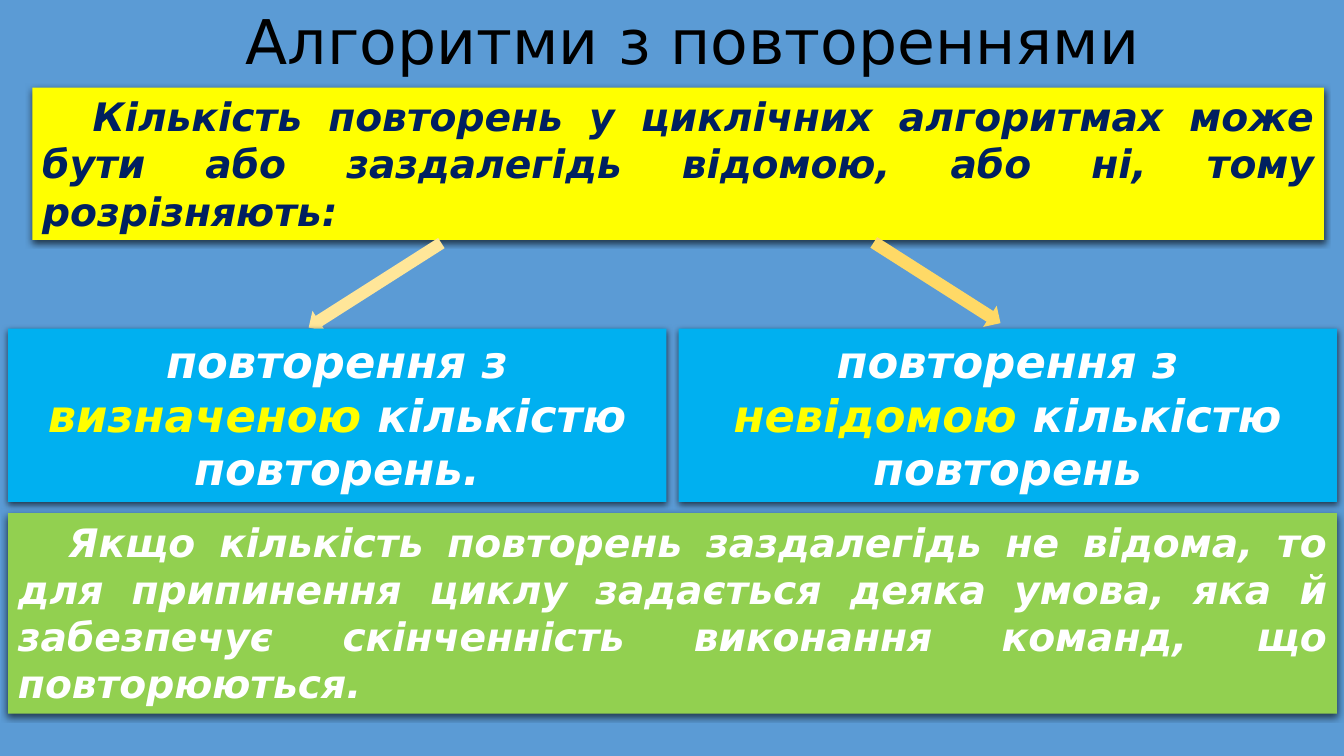
from pptx import Presentation
from pptx.dml.color import RGBColor
from pptx.enum.shapes import MSO_SHAPE
from pptx.enum.text import MSO_ANCHOR, MSO_AUTO_SIZE, PP_ALIGN
from pptx.oxml import parse_xml
from pptx.oxml.ns import nsdecls, qn
from pptx.util import Inches, Pt

FONT = "DejaVu Sans"
BACK = RGBColor(0x5B, 0x9B, 0xD5)
BLACK = RGBColor(0, 0, 0)
WHITE = RGBColor(0xFF, 0xFF, 0xFF)
NAVY = RGBColor(0x00, 0x20, 0x60)
YELLOW = RGBColor(0xFF, 0xFF, 0x00)
BLUE = RGBColor(0x00, 0xB0, 0xF0)
GREEN = RGBColor(0x92, 0xD0, 0x50)
CREAM = RGBColor(0xFF, 0xE6, 0x99)
GOLD = RGBColor(0xFF, 0xD9, 0x66)

TITLE = "Алгоритми з повтореннями"
INTRO = ("Кількість повторень у циклічних алгоритмах може бути або "
         "заздалегідь відомою, або ні, тому розрізняють:")
KINDS = [
    [("повторення з ", WHITE), ("визначеною", YELLOW),
     (" кількістю повторень.", WHITE)],
    [("повторення з ", WHITE), ("невідомою", YELLOW),
     (" кількістю повторень", WHITE)],
]
NOTE = ("Якщо кількість повторень заздалегідь не відома, то для припинення "
        "циклу задається деяка умова, яка й забезпечує скінченність "
        "виконання команд, що повторюються.")
# box, turn in degrees, mirrored, fill
ARROWS = [
    ((2.94, 2.71, 1.56, 0.24), -32.5, False, CREAM),
    ((8.55, 2.68, 1.49, 0.25), 32.5, True, GOLD),
]
SIDE, WIDE, GAP = 0.08, 13.18, 0.12
HALF = (WIDE - GAP) / 2
SHADOW = (f'<a:outerShdw {nsdecls("a")} blurRad="{Pt(4.5)}" dist="{Pt(1.5)}" '
          'dir="5400000" algn="ctr" rotWithShape="0"><a:srgbClr val="000000">'
          '<a:alpha val="63000"/></a:srgbClr></a:outerShdw>')


def write(para, parts, size, strong=True):
    """Add coloured runs to a paragraph."""
    for text, color in parts:
        run = para.add_run()
        run.text = text
        font = run.font
        font.name, font.size = FONT, Pt(size)
        font.bold = font.italic = strong
        font.color.rgb = color


def add_flat(slide, kind, box, fill):
    """Add a filled shape with no outline and no shadow."""
    shape = slide.shapes.add_shape(kind, *map(Inches, box))
    shape.fill.solid()
    shape.fill.fore_color.rgb = fill
    shape.line.fill.background()
    shape.shadow.inherit = False
    return shape


def add_panel(slide, box, fill, parts, size, align, indent=0):
    """Add a shadowed rectangle with one paragraph."""
    panel = add_flat(slide, MSO_SHAPE.RECTANGLE, box, fill)
    panel._element.spPr.find(qn("a:effectLst")).append(parse_xml(SHADOW))
    frame = panel.text_frame
    frame.word_wrap = True
    frame.auto_size = MSO_AUTO_SIZE.SHAPE_TO_FIT_TEXT
    frame.vertical_anchor = MSO_ANCHOR.TOP
    para = frame.paragraphs[0]
    para.alignment = align
    para._p.get_or_add_pPr().set("indent", str(Inches(indent)))
    write(para, parts, size)


def add_title(slide):
    box = slide.shapes.add_textbox(*map(Inches, (2.34, 0.15, 9.9, 0.58)))
    frame = box.text_frame
    frame.word_wrap = True
    frame.vertical_anchor = MSO_ANCHOR.MIDDLE
    para = frame.paragraphs[0]
    para.line_spacing = 0.9
    write(para, [(TITLE, BLACK)], 44, strong=False)


def main():
    deck = Presentation()
    deck.slide_width, deck.slide_height = Inches(13.33), Inches(7.5)
    slide = deck.slides.add_slide(deck.slide_layouts[6])
    slide.background.fill.solid()
    slide.background.fill.fore_color.rgb = BACK

    add_title(slide)
    add_panel(slide, (0.32, 0.87, 12.81, 1.51), YELLOW, [(INTRO, NAVY)],
              28, PP_ALIGN.JUSTIFY, 0.5)
    for box, turn, mirror, fill in ARROWS:
        arrow = add_flat(slide, MSO_SHAPE.LEFT_ARROW, box, fill)
        arrow.rotation = turn
        if mirror:
            arrow._element.spPr.xfrm.set("flipH", "1")
    for i, parts in enumerate(KINDS):
        left = SIDE + i * (HALF + GAP)
        add_panel(slide, (left, 3.26, HALF, 1.72), BLUE, parts,
                  32, PP_ALIGN.CENTER)
    add_panel(slide, (SIDE, 5.09, WIDE, 1.99), GREEN, [(NOTE, WHITE)],
              28, PP_ALIGN.JUSTIFY, 0.5)
    deck.save("out.pptx")


if __name__ == "__main__":
    main()
